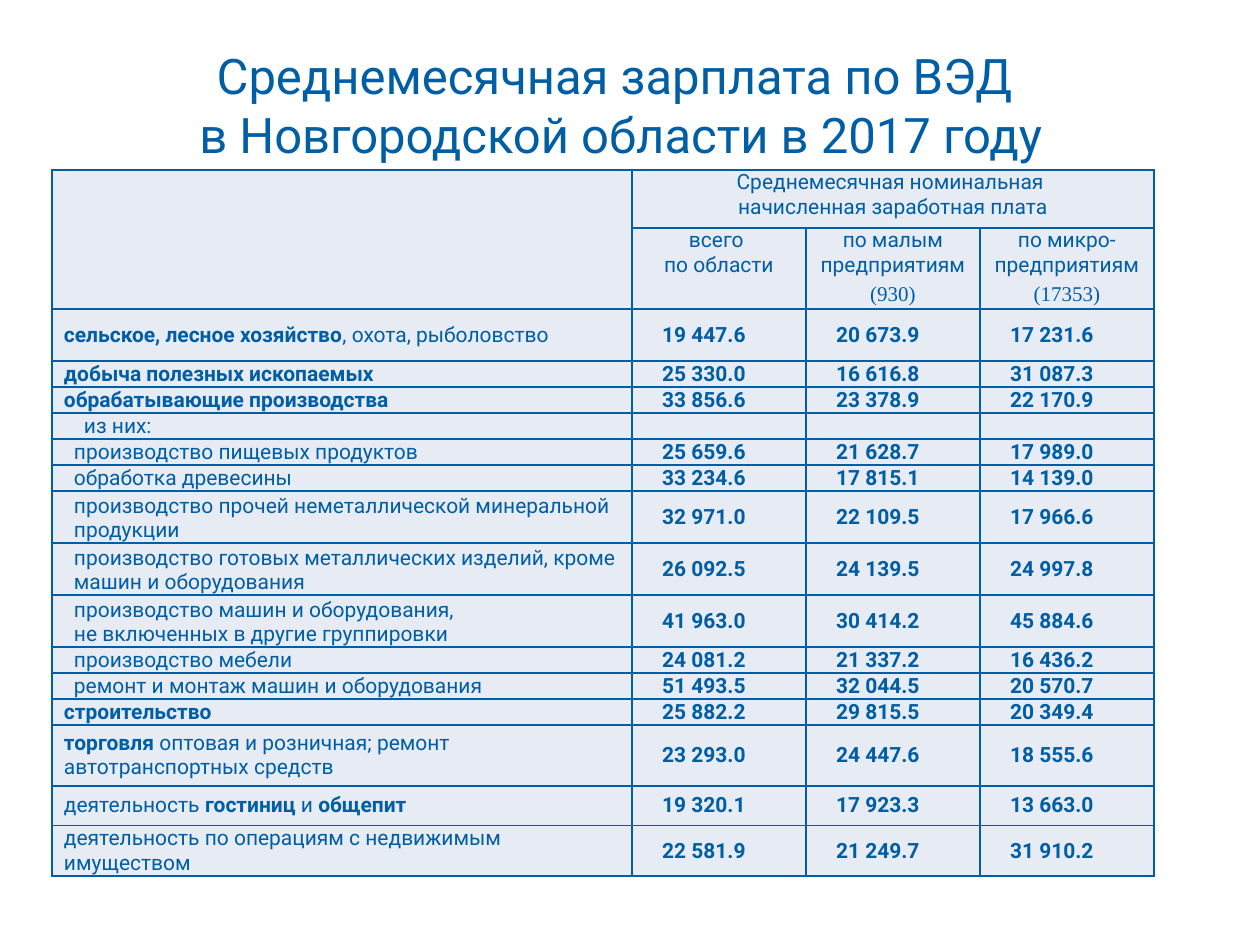
from dataclasses import dataclass

from lxml import etree
from pptx import Presentation
from pptx.dml.color import RGBColor
from pptx.enum.text import MSO_ANCHOR, PP_ALIGN
from pptx.oxml.ns import qn
from pptx.util import Emu, Pt

PX = 914400 // 126
CENTER, LEFT = PP_ALIGN.CENTER, PP_ALIGN.LEFT
TOP, MIDDLE, BOTTOM = MSO_ANCHOR.TOP, MSO_ANCHOR.MIDDLE, MSO_ANCHOR.BOTTOM


@dataclass(frozen=True)
class Theme:
    ink: str = "005EA4"
    cell: str = "E7EBF4"
    font: str = "Roboto"
    note_font: str = "Times New Roman"
    title_size: int = 28
    table_size: int = 12
    border: int = 1


THEME = Theme()
TITLE = "Среднемесячная зарплата по ВЭД \vв Новгородской области в 2017 году"
GROUP_HEADER = "Среднемесячная номинальная \vначисленная заработная плата"
COLUMN_HEADERS = [
    ("всего \vпо области",),
    ("по малым предприятиям", "(930)"),
    ("по микро-предприятиям", "(17353)"),
]
COLUMN_WIDTHS = [580, 174, 174, 174]
HEADER_HEIGHTS = [58, 79]
INDENT = 10
CELL_INSET = 2
NUMBER_INSET = 32

# Label with *bold* parts, indent level, row height, anchor, values
INDUSTRIES = [
    ("*сельское, лесное хозяйство*, охота, рыболовство", 1, 52, MIDDLE, ("19 447.6", "20 673.9", "17 231.6")),
    ("*добыча полезных ископаемых*", 1, 26, BOTTOM, ("25 330.0", "16 616.8", "31 087.3")),
    ("*обрабатывающие производства*", 1, 26, BOTTOM, ("33 856.6", "23 378.9", "22 170.9")),
    ("из них:", 3, 26, BOTTOM, ("", "", "")),
    ("производство пищевых продуктов", 2, 26, BOTTOM, ("25 659.6", "21 628.7", "17 989.0")),
    ("обработка древесины", 2, 26, BOTTOM, ("33 234.6", "17 815.1", "14 139.0")),
    ("производство прочей неметаллической минеральной продукции", 2, 52, BOTTOM,
     ("32 971.0", "22 109.5", "17 966.6")),
    ("производство готовых металлических изделий, кроме машин и оборудования", 2, 52, BOTTOM,
     ("26 092.5", "24 139.5", "24 997.8")),
    ("производство машин и оборудования, \vне включенных в другие группировки", 2, 52, BOTTOM,
     ("41 963.0", "30 414.2", "45 884.6")),
    ("производство мебели", 2, 26, BOTTOM, ("24 081.2", "21 337.2", "16 436.2")),
    ("ремонт и монтаж машин и оборудования", 2, 26, BOTTOM, ("51 493.5", "32 044.5", "20 570.7")),
    ("*строительство*", 1, 26, BOTTOM, ("25 882.2", "29 815.5", "20 349.4")),
    ("*торговля* оптовая и розничная; ремонт автотранспортных средств", 1, 61, MIDDLE,
     ("23 293.0", "24 447.6", "18 555.6")),
    ("деятельность *гостиниц* и *общепит*", 1, 40, MIDDLE, ("19 320.1", "17 923.3", "13 663.0")),
    ("деятельность по операциям с недвижимым имуществом", 1, 50, MIDDLE,
     ("22 581.9", "21 249.7", "31 910.2")),
]


def px(length):
    return Emu(length * PX)


def format_runs(para, size, font=THEME.font, bold=False):
    for span in para.runs:
        span.font.size = Pt(size)
        span.font.name = font
        span.font.bold = bold
        span.font.color.rgb = RGBColor.from_string(THEME.ink)


def add_title(page):
    box = page.shapes.add_textbox(px(25), px(45), px(1191), px(118))
    frame = box.text_frame
    frame.word_wrap = True
    frame.vertical_anchor = MIDDLE
    frame.margin_top = frame.margin_bottom = 0
    frame.text = TITLE
    para = frame.paragraphs[0]
    para.alignment = CENTER
    format_runs(para, THEME.title_size)


def style_cell(cell):
    properties = cell._tc.get_or_add_tcPr()
    for side in ("a:lnL", "a:lnR", "a:lnT", "a:lnB"):
        line = etree.SubElement(properties, qn(side), w=str(Pt(THEME.border)))
        fill = etree.SubElement(line, qn("a:solidFill"))
        etree.SubElement(fill, qn("a:srgbClr"), val=THEME.ink)
    cell.fill.solid()
    cell.fill.fore_color.rgb = RGBColor.from_string(THEME.cell)
    cell.margin_left = cell.margin_right = px(CELL_INSET)
    cell.margin_top = cell.margin_bottom = 0


def fill_header(cell, lines):
    cell.vertical_anchor = TOP
    cell.text_frame.text = "\n".join(lines)
    for para, font in zip(cell.text_frame.paragraphs, (THEME.font, THEME.note_font)):
        para.alignment = CENTER
        para.space_after = Pt(3)
        format_runs(para, THEME.table_size, font)


def fill_label(cell, label, level, anchor):
    cell.vertical_anchor = anchor
    para = cell.text_frame.paragraphs[0]
    para.alignment = LEFT
    para.space_after = Pt(1)
    para._p.get_or_add_pPr().set("marL", str(px(INDENT * level)))
    parts = label.split("*")
    para.text = parts[0]
    format_runs(para, THEME.table_size)
    for index, part in enumerate(parts[1:], 1):
        if part:
            span = para.add_run()
            span.text = part
            span.font.size = Pt(THEME.table_size)
            span.font.name = THEME.font
            span.font.bold = index % 2 == 1
            span.font.color.rgb = RGBColor.from_string(THEME.ink)


def fill_number(cell, value):
    cell.vertical_anchor = MIDDLE
    cell.margin_right = px(NUMBER_INSET)
    para = cell.text_frame.paragraphs[0]
    para.alignment = CENTER
    para.space_after = Pt(1)
    if value:
        para.text = value
        format_runs(para, THEME.table_size, bold=True)
    else:
        etree.SubElement(para._p, qn("a:endParaRPr"), sz=str(THEME.table_size * 100))


def add_salary_table(page):
    heights = HEADER_HEIGHTS + [industry[2] for industry in INDUSTRIES]
    frame = page.shapes.add_table(len(heights), len(COLUMN_WIDTHS), px(52), px(170),
                                  px(sum(COLUMN_WIDTHS)), px(sum(heights)))
    table = frame.table
    table.first_row = table.horz_banding = False
    for column, width in zip(table.columns, COLUMN_WIDTHS):
        column.width = px(width)
    for row, height in zip(table.rows, heights):
        row.height = px(height)
    for cell in table.iter_cells():
        style_cell(cell)
    table.cell(0, 0).merge(table.cell(1, 0))
    table.cell(0, 1).merge(table.cell(0, 3))
    fill_header(table.cell(0, 1), (GROUP_HEADER,))
    for column, lines in enumerate(COLUMN_HEADERS, 1):
        fill_header(table.cell(1, column), lines)
    for row, (label, level, _, anchor, values) in enumerate(INDUSTRIES, len(HEADER_HEIGHTS)):
        fill_label(table.cell(row, 0), label, level, anchor)
        for column, value in enumerate(values, 1):
            fill_number(table.cell(row, column), value)


def main():
    deck = Presentation()
    deck.slide_width, deck.slide_height = px(1260), px(945)
    page = deck.slides.add_slide(deck.slide_layouts[6])
    add_title(page)
    add_salary_table(page)
    deck.save("out.pptx")


if __name__ == "__main__":
    main()
